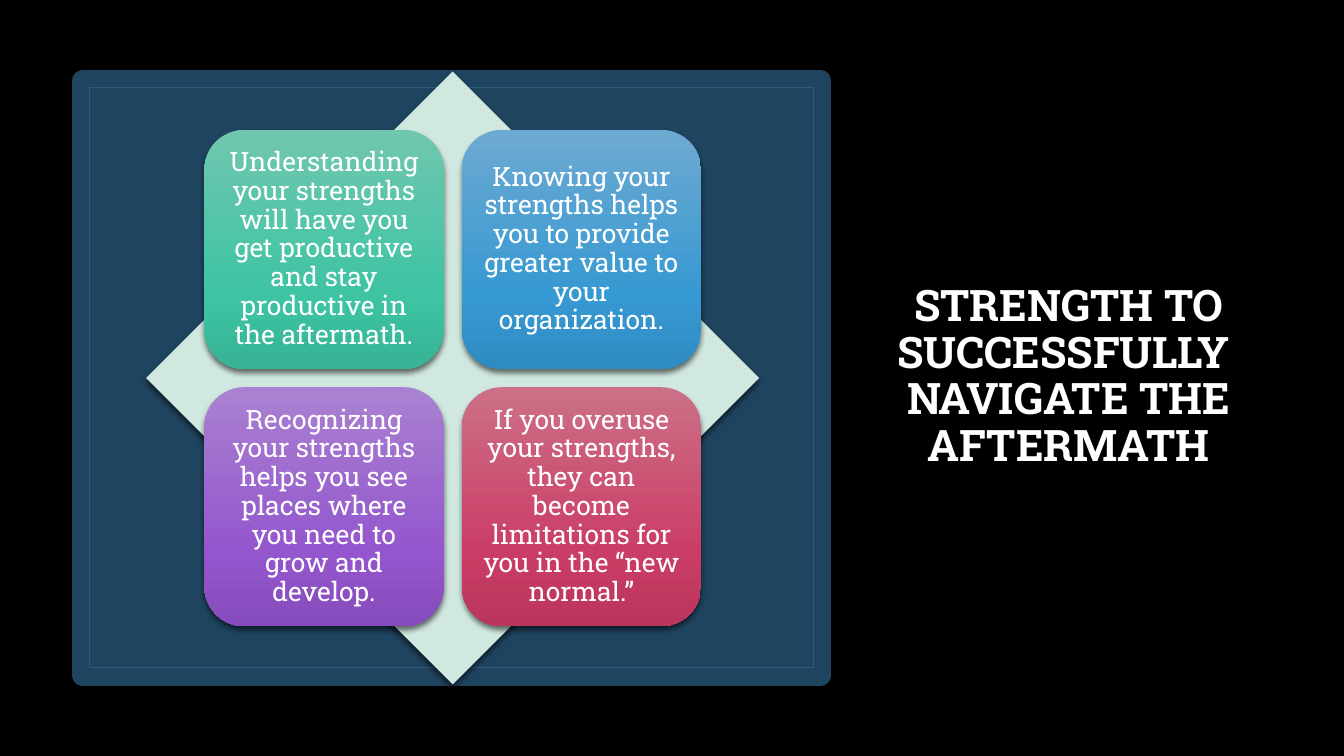
from lxml.etree import SubElement
from pptx import Presentation
from pptx.dml.color import RGBColor as Rgb
from pptx.enum.shapes import MSO_SHAPE as Kind
from pptx.enum.text import MSO_ANCHOR as Anchor, MSO_AUTO_SIZE as Fit, PP_ALIGN as Align
from pptx.oxml.ns import qn
from pptx.util import Inches, Pt

# Content
TITLE = "STRENGTH TO SUCCESSFULLY \vNAVIGATE THE AFTERMATH"
CARDS = [
    ("Understanding your strengths will have you get productive and stay "
     "productive in the aftermath.", "green"),
    ("Knowing your strengths helps you to provide greater value to your "
     "organization.", "blue"),
    ("Recognizing your strengths helps you see places where you need to grow "
     "and develop.", "violet"),
    ("If you overuse your strengths, they can become limitations for you in "
     "the “new normal.”", "red"),
]

# Style
FONT = "Roboto Slab"
HEX = {"back": "000000", "text": "FFFFFF", "panel": "1F445F",
       "frame": "2A5B7F", "gem": "D0E8E0"}
FADES = {
    "green": ("70C6AF", "3EC4A3", "37B395"),
    "blue": ("6DAAD2", "3799D2", "2F8CC2"),
    "violet": ("A981D1", "9456CD", "864BBC"),
    "red": ("CC7087", "CA3D66", "BA355B"),
}
STOPS = (0, 69, 100)

# Layout in inches; cards are shares of the diamond's side
WIDE, HIGH = 13.33, 7.5
HEAD = (8.61, 0.69, 3.98, 6.11)
PANEL = (0.82, 0.8, 7.32, 5.9)
FRAME = (0.89, 0.87, 7.18, 5.75)
LEFT, TOP, SIDE = 1.45, 0.71, 6.08
EDGE, STEP, CARD = 0.095 * SIDE, 0.42 * SIDE, 0.39 * SIDE


def color(name):
    return Rgb.from_string(HEX[name])


def draw(kind, box, fill=None, line=None, width=0):
    shape = slide.shapes.add_shape(kind, *map(Inches, box))
    shape.shadow.inherit = False
    if fill:
        shape.fill.solid()
        shape.fill.fore_color.rgb = color(fill)
    else:
        shape.fill.background()
    if line:
        shape.line.color.rgb = color(line)
        shape.line.width = Pt(width)
    else:
        shape.line.fill.background()
    return shape


def shade(shape, alpha, blur, dist):
    effects = shape._element.spPr.find(qn("a:effectLst"))
    outer = SubElement(effects, qn("a:outerShdw"), blurRad=str(Pt(blur)),
                       dist=str(Pt(dist)), dir="5400000", algn="ctr",
                       rotWithShape="0")
    black = SubElement(outer, qn("a:srgbClr"), val=HEX["back"])
    SubElement(black, qn("a:alpha"), val=str(alpha * 1000))


def fade(shape, tones):
    shape.fill.gradient()
    shape.fill.gradient_angle = 270
    stops = shape._element.spPr.find(".//" + qn("a:gsLst"))
    for old in list(stops):
        stops.remove(old)
    for place, tone in zip(STOPS, tones):
        stop = SubElement(stops, qn("a:gs"), pos=str(place * 1000))
        SubElement(stop, qn("a:srgbClr"), val=tone)


def write(shape, text, size, bold=False):
    frame = shape.text_frame
    frame.text = text
    frame.word_wrap = True
    frame.auto_size = Fit.NONE
    frame.vertical_anchor = Anchor.MIDDLE
    para = frame.paragraphs[0]
    para.alignment = Align.CENTER
    para.line_spacing = 0.9
    para.space_before = Pt(0)
    for run in para.runs:
        run.font.name = FONT
        run.font.size = Pt(size)
        run.font.bold = bold
        run.font.color.rgb = color("text")
    return frame


# Slide and title
deck = Presentation()
deck.slide_width, deck.slide_height = Inches(WIDE), Inches(HIGH)
slide = deck.slides.add_slide(deck.slide_layouts[5])
slide.background.fill.solid()
slide.background.fill.fore_color.rgb = color("back")
head = slide.shapes.title
head.left, head.top, head.width, head.height = map(Inches, HEAD)
write(head, TITLE, 31, bold=True)

# Panel, frame and diamond
shade(draw(Kind.RECTANGLE, PANEL, "panel", "panel", 15), 40, 4.3, 1.4)
draw(Kind.RECTANGLE, FRAME, line="frame", width=1)
shade(draw(Kind.DIAMOND, (LEFT, TOP, SIDE, SIDE), "gem"), 54, 4, 3)

# Two-by-two cards
for i, (text, tone) in enumerate(CARDS):
    row, col = divmod(i, 2)
    card = draw(Kind.ROUNDED_RECTANGLE, (LEFT + EDGE + col * STEP,
                                         TOP + EDGE + row * STEP, CARD, CARD))
    fade(card, FADES[tone])
    shade(card, 54, 4, 3)
    frame = write(card, text, 19)
    frame.margin_left = frame.margin_right = Inches(0.08)
    frame.margin_top = frame.margin_bottom = Inches(0.08)

deck.save("out.pptx")
